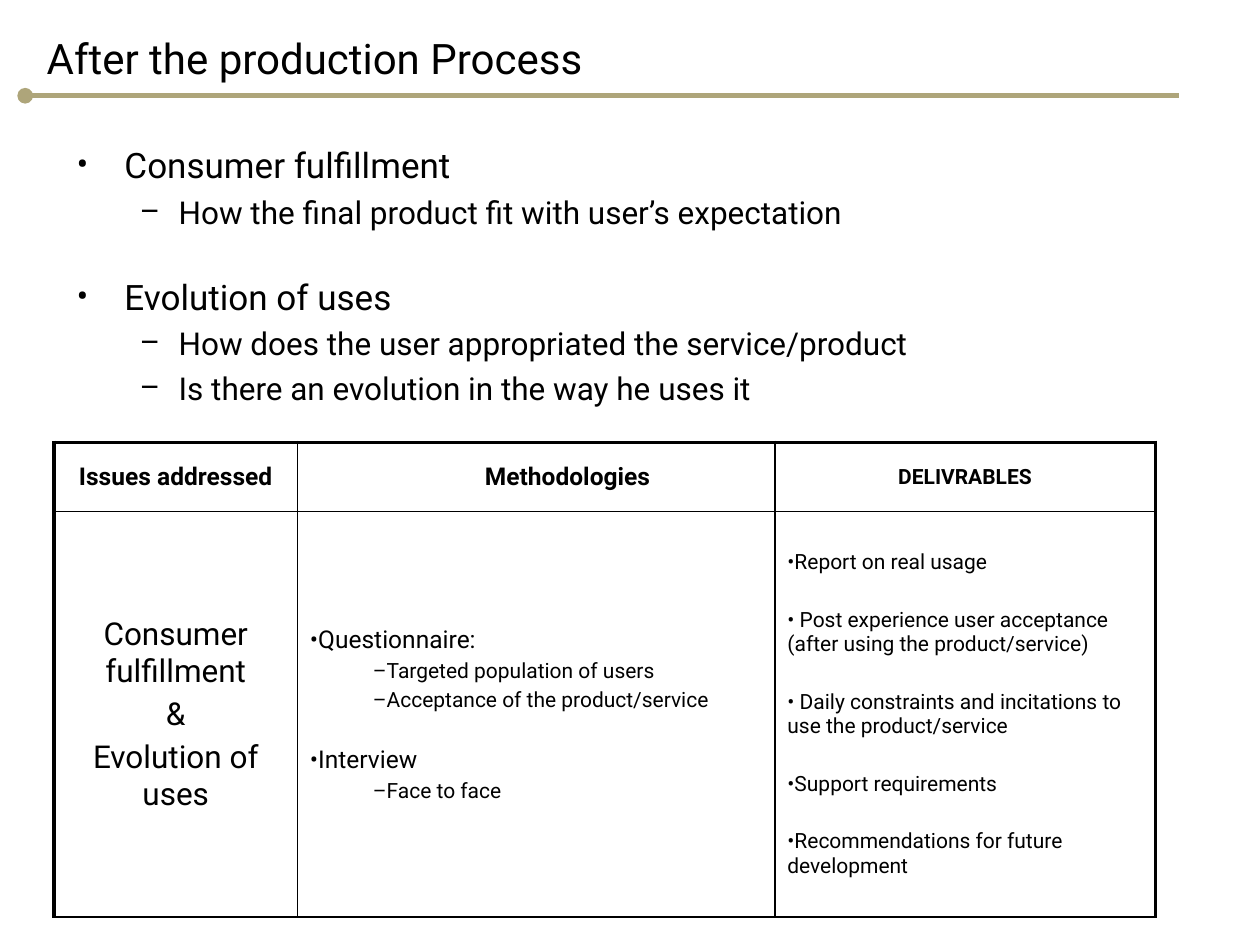
from dataclasses import dataclass

from lxml.etree import SubElement
from pptx import Presentation
from pptx.dml.color import RGBColor
from pptx.enum.shapes import MSO_CONNECTOR as Connector
from pptx.enum.text import MSO_ANCHOR as Anchor, PP_ALIGN as Align
from pptx.oxml import parse_xml
from pptx.oxml.ns import nsdecls, qn
from pptx.util import Inches, Pt

COLORS = {"text": "000000", "rule": "AEA57A", "border": "000000"}
FONT = "Roboto"
COLUMNS, ROWS = 100, 75
THIN, THICK = 1, 2.25


@dataclass
class Line:
    """One paragraph; margin and indent are in inches."""
    text: str
    size: float
    before: float = 0
    bullet: str = ""
    level: int = 0
    margin: float = 0
    indent: float = 0


def write(frame, lines, align=Align.LEFT, anchor=Anchor.TOP, bold=False):
    frame.word_wrap = True
    frame.vertical_anchor = anchor
    for number, line in enumerate(lines):
        paragraph = frame.add_paragraph() if number else frame.paragraphs[0]
        paragraph.alignment, paragraph.level = align, line.level
        paragraph.space_before = Pt(line.before)
        props = paragraph._p.get_or_add_pPr()
        props.set("marL", str(Inches(line.margin)))
        props.set("indent", str(Inches(line.indent)))
        if line.bullet:
            SubElement(props, qn("a:buFont"), typeface=FONT)
            SubElement(props, qn("a:buChar"), char=line.bullet)
        run = paragraph.add_run()
        run.text = line.text
        run.font.name, run.font.size, run.font.bold = FONT, Pt(line.size), bold
        run.font.color.rgb = RGBColor.from_string(COLORS["text"])


def set_borders(cell, **widths):
    props = cell._tc.get_or_add_tcPr()
    for position, (side, width) in enumerate(widths.items()):
        props.insert(position, parse_xml(
            f'<a:ln{side} {nsdecls("a")} w="{Pt(width)}"><a:solidFill>'
            f'<a:srgbClr val="{COLORS["border"]}"/></a:solidFill></a:ln{side}>'))


class SlideBuilder:
    """Places elements on a grid of COLUMNS by ROWS."""

    def __init__(self, deck):
        self.column = deck.slide_width / COLUMNS
        self.row = deck.slide_height / ROWS
        self.slide = deck.slides.add_slide(deck.slide_layouts[5])

    def box(self, left, top, width, height):
        return (round(left * self.column), round(top * self.row),
                round(width * self.column), round(height * self.row))

    def title(self, text, *place):
        title = self.slide.shapes.title
        title.left, title.top, title.width, title.height = self.box(*place)
        write(title.text_frame, [Line(text, 24)], anchor=Anchor.MIDDLE)

    def rule(self, left, right, height):
        x1, y, x2, _ = self.box(left, height, right, 0)
        rule = self.slide.shapes.add_connector(Connector.STRAIGHT, x1, y, x2, y)
        rule.line.color.rgb = RGBColor.from_string(COLORS["rule"])
        rule.line.width = Pt(3)
        SubElement(rule.line._get_or_add_ln(), qn("a:headEnd"), type="oval")
        SubElement(rule._element.spPr, qn("a:effectLst"))

    def text(self, lines, *place):
        write(self.slide.shapes.add_textbox(*self.box(*place)).text_frame, lines)

    def table(self, content, widths, heights, left, top):
        place = self.box(left, top, sum(widths), sum(heights))
        table = self.slide.shapes.add_table(len(heights), len(widths), *place).table
        table.first_row = table.horz_banding = False
        for column, width in zip(table.columns, widths):
            column.width = round(width * self.column)
        for row, height in zip(table.rows, heights):
            row.height = round(height * self.row)
        last = len(widths) - 1
        for r, cells in enumerate(content):
            for c, lines in enumerate(cells):
                cell = table.cell(r, c)
                cell.fill.background()
                centred = r == 0 or c == 0
                write(cell.text_frame, lines, bold=r == 0,
                      align=Align.CENTER if centred else Align.LEFT)
                cell.vertical_anchor = Anchor.MIDDLE
                set_borders(cell, L=THICK if c == 0 else THIN,
                            R=THICK if c == last else THIN,
                            T=THICK if r == 0 else THIN, B=THIN)


def topic(text, before=0):
    return Line(text, 20, before, "•", 0, 0.38, -0.38)


def detail(text):
    return Line(text, 18, 4, "–", 1, 0.81, -0.31)


def method(text, before=0):
    return Line(text, 14, before, "•")


def step(text):
    return Line(text, 12, 2.5, "–", 1, 0.5)


def main():
    deck = Presentation()
    deck.slide_width, deck.slide_height = Inches(10), Inches(7.5)
    builder = SlideBuilder(deck)

    builder.rule(2, 93.6, 7.6)
    builder.title("After the production Process", 2.7, 0, 88.3, 9.1)
    builder.text([
        topic("Consumer fulfillment"),
        detail("How the final product fit with user’s expectation"),
        topic("Evolution of uses", before=25.6),
        detail("How does the user appropriated the service/product"),
        detail("Is there an evolution in the way he uses it"),
    ], 5.1, 10.9, 85, 23)

    header = [[Line("Issues addressed", 14)],
              [Line("Methodologies", 14, level=1, margin=0.5)],
              [Line("DELIVRABLES", 12)]]
    issues = [Line("Consumer fulfillment", 18), Line("&", 18, 3.5),
              Line("Evolution of uses", 18, 3.5)]
    methodologies = [
        method("Questionnaire:"),
        step("Targeted population of users"),
        step("Acceptance of the product/service"),
        method("Interview", before=19),
        step("Face to face"),
    ]
    deliverables = [
        Line(text, 12, 18.8 if number else 0, "•") for number, text in enumerate([
            "Report on real usage",
            " Post experience user acceptance (after using the product/service)",
            " Daily constraints and incitations to use the product/service",
            "Support requirements",
            "Recommendations for future development",
        ])]
    builder.table([header, [issues, methodologies, deliverables]],
                  widths=[19.3, 37.9, 30.2], heights=[5.5, 32.2], left=4.3, top=35.1)
    deck.save("out.pptx")


if __name__ == "__main__":
    main()
